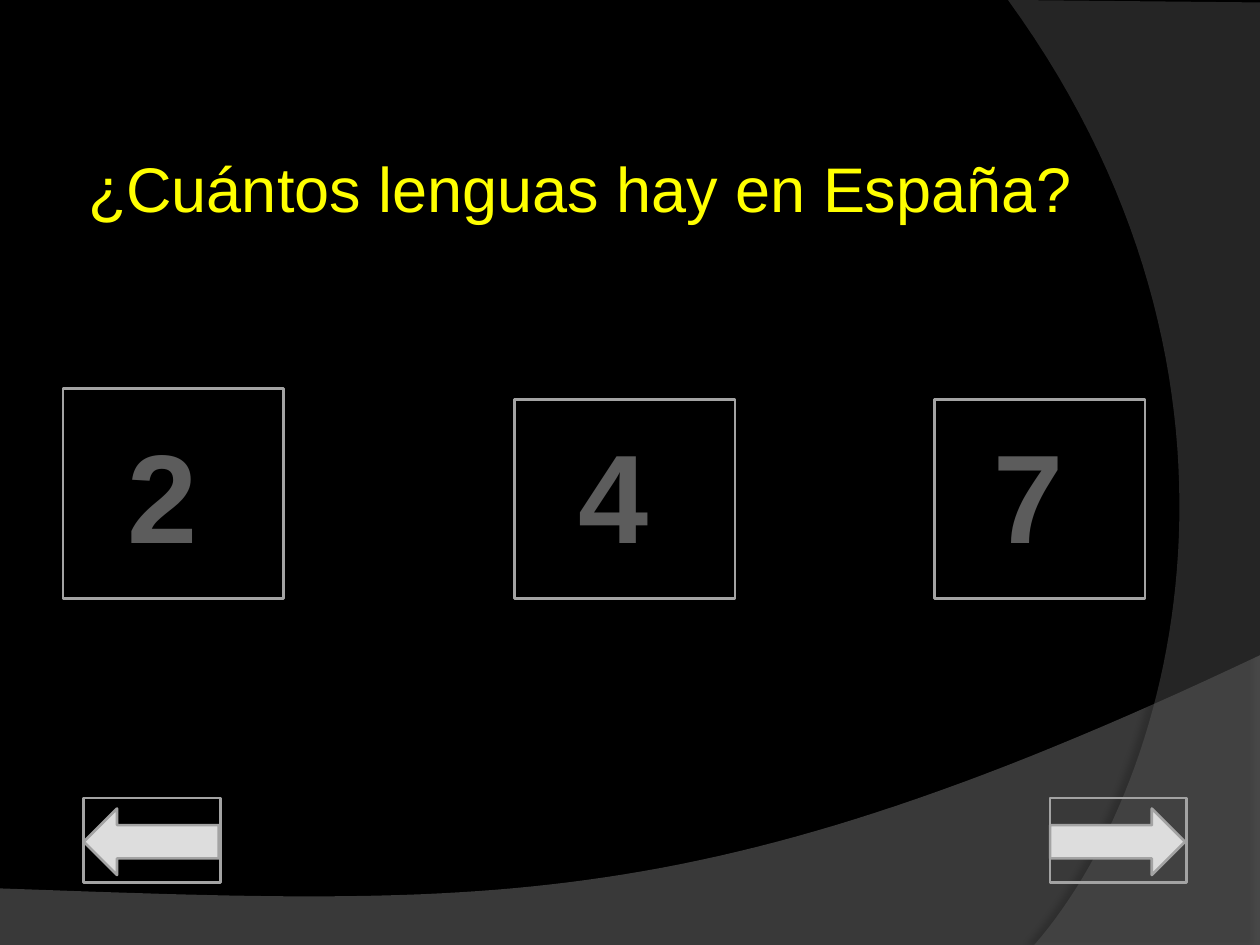
from lxml.etree import SubElement
from pptx import Presentation
from pptx.dml.color import RGBColor
from pptx.enum.shapes import MSO_SHAPE as Shape
from pptx.enum.text import MSO_ANCHOR as Anchor, PP_ALIGN as Align
from pptx.oxml.ns import qn
from pptx.util import Cm, Pt

BLACK, YELLOW, DIGIT = "000000", "FFFF00", "5C5C5C"
LINE, ARROW = "A3A3A3", "DDDDDD"


def color(value):
    return RGBColor.from_string(value)


def add_alpha(clr, percent):
    SubElement(clr, qn("a:alpha"), val=str(percent * 1000))


def write(sp, text, size=36, fill=YELLOW, bold=False, anchor=Anchor.TOP,
          left=0.25, top=0.13, right=0.25, bottom=0.13):
    tf = sp.text_frame
    tf.word_wrap = True
    tf.vertical_anchor = anchor
    tf.margin_left, tf.margin_top = Cm(left), Cm(top)
    tf.margin_right, tf.margin_bottom = Cm(right), Cm(bottom)
    p = tf.paragraphs[0]
    p.alignment = Align.CENTER
    r = p.add_run()
    r.text = text
    r.font.name, r.font.size, r.font.bold = "Arial", Pt(size), bold
    r.font.color.rgb = color(fill)


def add_outlined(s, kind, x, y, w, h, fill=None):
    sp = s.shapes.add_shape(kind, Cm(x), Cm(y), Cm(w), Cm(h))
    sp.shadow.inherit = False
    if fill:
        sp.fill.solid()
        sp.fill.fore_color.rgb = color(fill)
    else:
        sp.fill.background()
    sp.line.color.rgb = color(LINE)
    sp.line.width = Pt(1.5)
    return sp


def bezier(p0, p1, p2, p3, steps=60):
    """Points along a cubic curve, without its start."""
    for i in range(1, steps + 1):
        t = i / steps
        u = 1 - t
        yield tuple(u**3 * a + 3 * u * u * t * b + 3 * u * t * t * c + t**3 * d
                    for a, b, c, d in zip(p0, p1, p2, p3))


def add_sweep(s, x, y, corners, curve, fill, opacity, shade, dist, angle):
    """Translucent band: straight corners, then a curve from the last one."""
    points = [(Cm(x + a), Cm(y + b))
              for a, b in [*corners, *bezier(corners[-1], *curve)]]
    builder = s.shapes.build_freeform(*points[0], scale=1.0)
    builder.add_line_segments(points[1:], close=True)
    sp = builder.convert_to_shape()
    sp.fill.solid()
    sp.fill.fore_color.rgb = color(fill)
    sp.line.fill.background()
    sp.shadow.inherit = False
    props = sp._element.spPr
    add_alpha(props.find(qn("a:solidFill"))[0], opacity)
    shadow = SubElement(props.find(qn("a:effectLst")), qn("a:outerShdw"),
                        blurRad=str(Pt(4)), dist=str(Pt(dist)),
                        dir=str(angle * 60000), algn="ctr", rotWithShape="0")
    add_alpha(SubElement(shadow, qn("a:srgbClr"), val=BLACK), shade)


def add_backdrop(s):
    s.background.fill.solid()
    s.background.fill.fore_color.rgb = color(BLACK)
    add_sweep(s, 0, 13.21,
              [(0, 4.7), (0, 5.87), (25.4, 5.87), (25.4, 0)],
              [(14.2, 5.31), (9.93, 5.05), (0, 4.7)],
              "7F7F7F", 45, shade=35, dist=3.5, angle=270)
    add_sweep(s, 20.32, 0,
              [(5.08, 0.05), (5.08, 19.05), (0.53, 19.05)],
              [(3.43, 15.72), (5.54, 7.62), (0, 0)],
              "5E5E5E", 40, shade=45, dist=4, angle=180)


def add_question(s, text, x, y, w, h):
    sp = s.shapes.add_textbox(Cm(x), Cm(y), Cm(w), Cm(h))
    write(sp, text, left=0.35, top=0.27)


def add_answer(s, text, x, bottom, w, h):
    sp = add_outlined(s, Shape.ACTION_BUTTON_CUSTOM, x, bottom - h, w, h)
    write(sp, text, size=72, fill=DIGIT, bold=True, anchor=Anchor.BOTTOM,
          left=0, top=0, right=0.45, bottom=0.6)


def add_nav_button(s, kind, x, y, w=2.75, h=1.7):
    inset = 0.21
    add_outlined(s, kind, x, y + inset, w - 0.03, h - 2 * inset + 0.06, ARROW)
    add_outlined(s, Shape.ACTION_BUTTON_CUSTOM, x, y, w, h)


def main():
    prs = Presentation()
    prs.slide_width, prs.slide_height = Cm(25.4), Cm(19.05)
    s = prs.slides.add_slide(prs.slide_layouts[6])
    add_backdrop(s)
    add_question(s, "¿Cuántos lenguas hay en España?", 1.27, 2.74, 20.75, 14.27)
    for text, x, w, h in [("2", 1.27, 4.45, 4.24),
                          ("4", 10.37, 4.45, 4.02),
                          ("7", 18.84, 4.24, 4.02)]:
        add_answer(s, text, x, 12.07, w, h)
    for kind, x in [(Shape.LEFT_ARROW, 1.69), (Shape.RIGHT_ARROW, 21.17)]:
        add_nav_button(s, kind, x, 16.09)
    prs.save("out.pptx")


if __name__ == "__main__":
    main()
